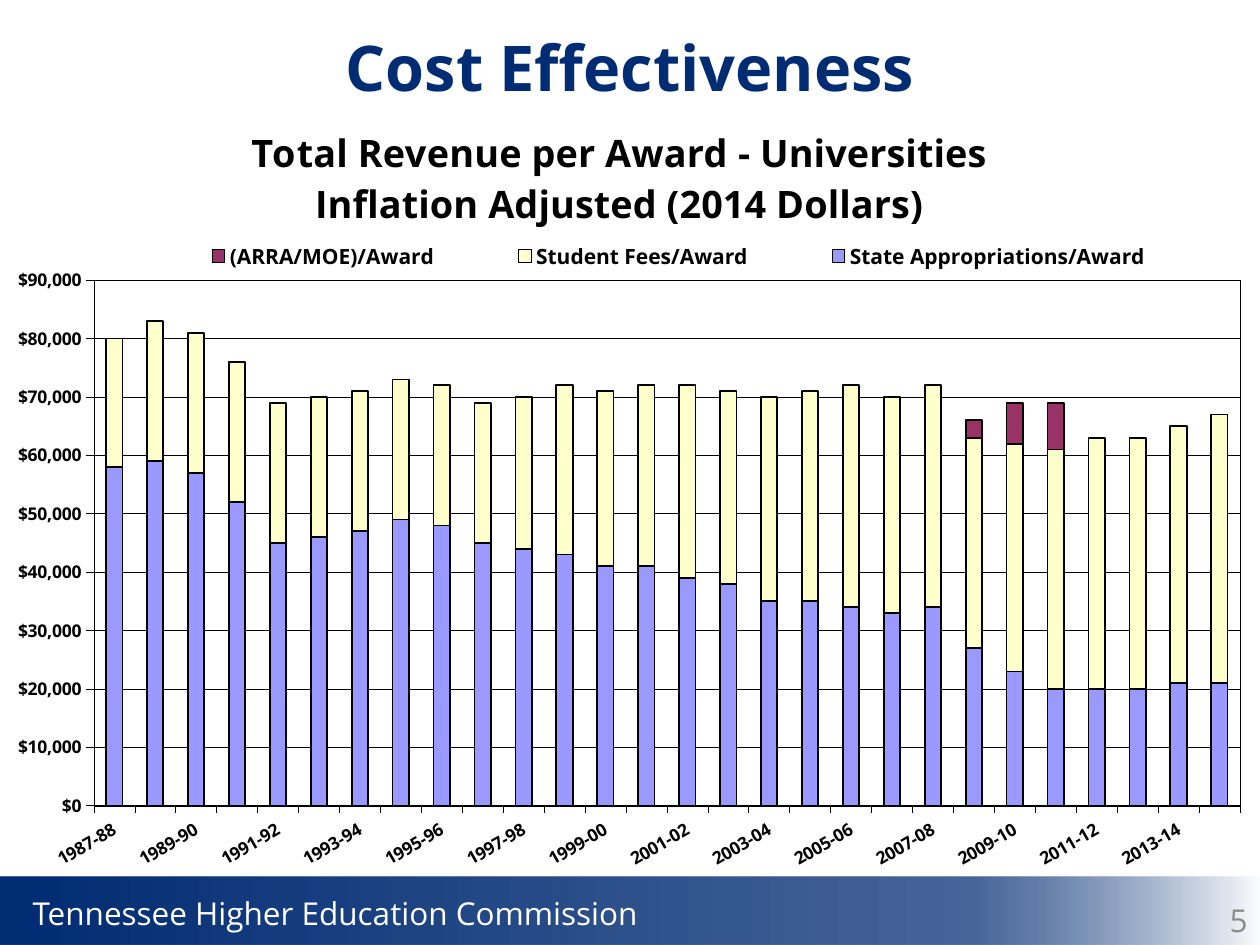
from copy import deepcopy
from dataclasses import dataclass

from lxml import etree
from pptx import Presentation, util as u
from pptx.chart.data import CategoryChartData
from pptx.dml.color import RGBColor
from pptx.enum import chart as ch, shapes, text
from pptx.oxml.ns import qn


@dataclass(frozen=True)
class Theme:
    font: str = "Open Sans"
    base: str = "Arial"
    navy: str = "002C73"
    white: str = "FFFFFF"
    grey: str = "8C8C8C"
    black: str = "000000"
    title: float = 36
    head: float = 21.6
    foot: float = 18
    key: float = 12
    axis: float = 10
    hair: float = 0.25


T = Theme()
WIDE, HIGH = 10, 7.5

YEARS = [f"{y}-{(y + 1) % 100:02d}" for y in range(1987, 2015)]
# Series name, colour, thousands of dollars per award
SERIES = [
    ("State Appropriations/Award", "9999FF",
     [58, 59, 57, 52, 45, 46, 47, 49, 48, 45, 44, 43, 41, 41,
      39, 38, 35, 35, 34, 33, 34, 27, 23, 20, 20, 20, 21, 21]),
    ("Student Fees/Award", "FFFFCC",
     [22, 24, 24, 24, 24, 24, 24, 24, 24, 24, 26, 29, 30, 31,
      33, 33, 35, 36, 38, 37, 38, 36, 39, 41, 43, 43, 44, 46]),
    ("(ARRA/MOE)/Award", "993366", [0] * 21 + [3, 7, 8] + [0] * 4),
]


def rgb(code):
    return RGBColor.from_string(code)


def box(*sides):
    return [u.Inches(side) for side in sides]


def style(font, size, color, bold=False, name=T.font):
    font.name, font.size, font.bold = name, u.Pt(size), bold
    font.color.rgb = rgb(color)


def stroke(line, width):
    line.color.rgb = rgb(T.black)
    line.width = u.Pt(width)


def add_title(slide, words):
    shape = slide.shapes.title
    shape.left, shape.top, shape.width, shape.height = box(0, 0.17, WIDE, 0.71)
    frame = shape.text_frame
    frame.text = words
    frame.vertical_anchor = text.MSO_ANCHOR.MIDDLE
    para = frame.paragraphs[0]
    para.alignment = text.PP_ALIGN.CENTER
    style(para.runs[0].font, T.title, T.navy, True)


def add_band(slide):
    """Footer band that fades from navy to white."""
    band = slide.shapes.add_shape(
        shapes.MSO_SHAPE.RECTANGLE, *box(0, 6.96, WIDE + 0.02, HIGH - 6.96))
    band.shadow.inherit = False
    band.line.fill.background()
    band.fill.gradient()
    band.fill.gradient_angle = 0
    first, last = band.fill.gradient_stops
    for stop, color, spot in ((first, T.navy, 0), (last, T.white, 1)):
        stop.color.rgb, stop.position = rgb(color), spot
    stops = band._element.spPr.find(".//" + qn("a:gsLst"))
    mid = deepcopy(stops[0])
    mid.set("pos", "77000")
    etree.SubElement(mid[0], qn("a:alpha"), val="72000")
    stops.insert(1, mid)


def add_label(slide, words, area, color, align, wrap):
    frame = slide.shapes.add_textbox(*box(*area)).text_frame
    frame.text = words
    frame.word_wrap = wrap
    para = frame.paragraphs[0]
    para.alignment = align
    style(para.runs[0].font, T.foot, color)


def place(node, index, inner=False, **shares):
    """Put a chart part at fixed shares of the chart's size."""
    for old in node.findall(qn("c:layout")):
        node.remove(old)
    layout = etree.Element(qn("c:layout"))
    node.insert(index, layout)
    man = etree.SubElement(layout, qn("c:manualLayout"))
    if inner:
        etree.SubElement(man, qn("c:layoutTarget"), val="inner")
    for key in ("xMode", "yMode"):
        etree.SubElement(man, qn("c:" + key), val="edge")
    for key, share in shares.items():
        etree.SubElement(man, qn("c:" + key), val=str(share))


def set_head(chart, lines):
    title = chart.chart_title
    frame = title.text_frame
    frame.text = lines
    for para in frame.paragraphs:
        para.alignment = text.PP_ALIGN.CENTER
        for run in para.runs:
            style(run.font, T.head, T.black, True)
    place(title._element, 1, x=0.19, y=0.02)


def set_key(chart):
    chart.has_legend = True
    key = chart.legend
    key.position = ch.XL_LEGEND_POSITION.RIGHT
    key.include_in_layout = False
    style(key.font, T.key, T.black, True)
    place(key._element, 1, x=0.1, y=0.17, w=0.87, h=0.05)


def set_axes(chart):
    cat, val = chart.category_axis, chart.value_axis
    for axis in (cat, val):
        axis.major_tick_mark = ch.XL_TICK_MARK.OUTSIDE
        axis.minor_tick_mark = ch.XL_TICK_MARK.NONE
        style(axis.tick_labels.font, T.axis, T.black, True)
        stroke(axis.format.line, T.hair)
    node = cat._element
    node.find(qn("c:txPr")).find(qn("a:bodyPr")).set("rot", "-1800000")
    end = node.find(qn("c:noMultiLvlLbl"))
    for tag, step in (("tickLblSkip", "2"), ("tickMarkSkip", "1")):
        end.addprevious(etree.Element(qn("c:" + tag), val=step))
    val.minimum_scale, val.maximum_scale, val.major_unit = 0, 90000, 10000
    val.tick_labels.number_format = "\\$#,##0"
    val.tick_labels.number_format_is_linked = False
    stroke(val.major_gridlines.format.line, T.hair)


def set_plot(chart):
    plot = chart.plots[0]
    plot.gap_width, plot.overlap = 150, 100
    plot.vary_by_categories = False
    for series, (_, color, _) in zip(plot.series, SERIES):
        series.format.fill.solid()
        series.format.fill.fore_color.rgb = rgb(color)
        stroke(series.format.line, 1)
    area = chart._chartSpace.find(".//" + qn("c:plotArea"))
    place(area, 0, True, x=0.067, y=0.226, w=0.917, h=0.676)
    props = etree.SubElement(area, qn("c:spPr"))
    etree.SubElement(props, qn("a:noFill"))
    line = etree.SubElement(props, qn("a:ln"), w=str(u.Pt(T.hair)))
    fill = etree.SubElement(line, qn("a:solidFill"))
    etree.SubElement(fill, qn("a:srgbClr"), val=T.black)


def add_bars(slide):
    data = CategoryChartData()
    data.categories = YEARS
    for name, _, sums in SERIES:
        data.add_series(name, [1000 * n for n in sums])
    chart = slide.shapes.add_chart(
        ch.XL_CHART_TYPE.COLUMN_STACKED,
        *box(0.08, 0.83, WIDE - 0.08, 6.17), data).chart
    style(chart.font, T.axis, T.black, name=T.base)
    set_head(chart, "Total Revenue per Award - Universities\n"
                    "Inflation Adjusted (2014 Dollars)")
    set_key(chart)
    set_axes(chart)
    set_plot(chart)


def main():
    deck = Presentation()
    deck.slide_width, deck.slide_height = box(WIDE, HIGH)
    slide = deck.slides.add_slide(deck.slide_layouts[5])
    add_band(slide)
    add_label(slide, "Tennessee Higher Education Commission",
              (0.16, 7.05, 5.05, 0.4), T.white, text.PP_ALIGN.LEFT, False)
    add_label(slide, "5", (7.67, 7.1, 2.33, 0.4), T.grey,
              text.PP_ALIGN.RIGHT, True)
    add_title(slide, "Cost Effectiveness")
    add_bars(slide)
    deck.save("out.pptx")


if __name__ == "__main__":
    main()
